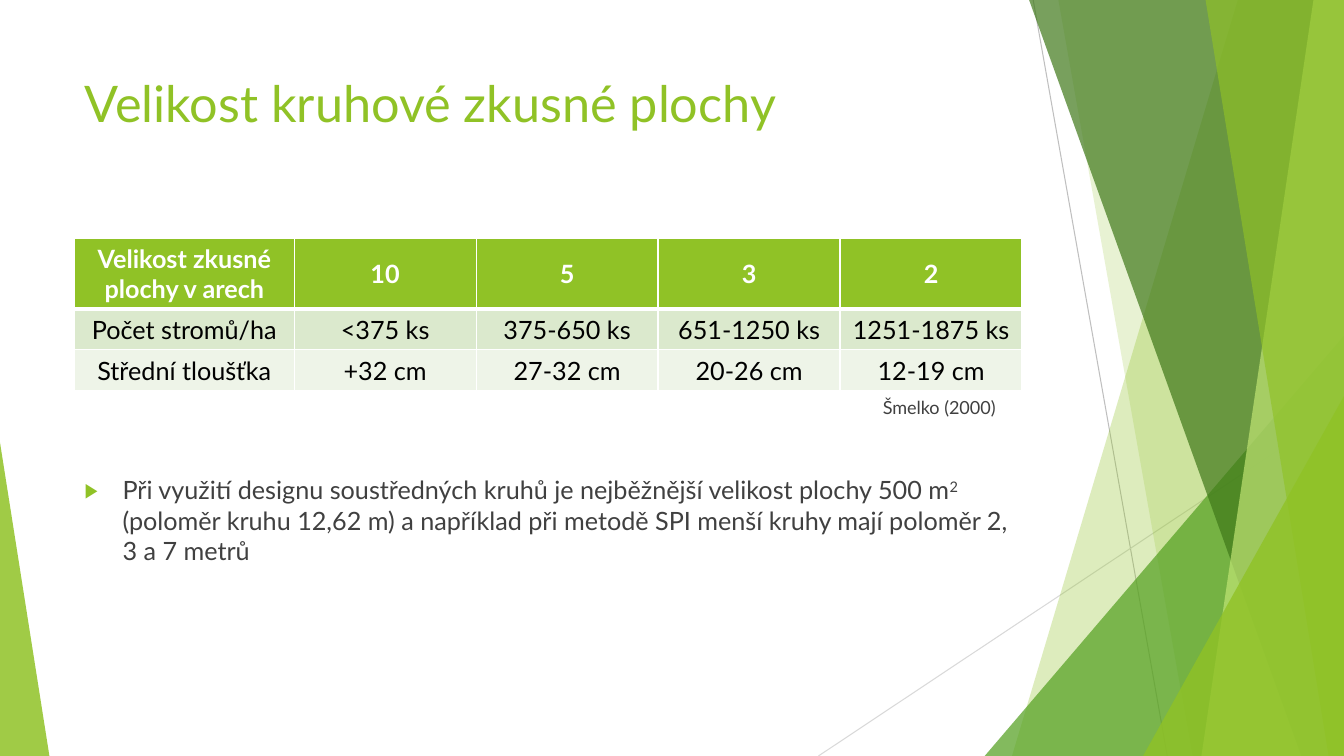
from lxml import etree
from pptx import Presentation
from pptx.dml.color import RGBColor
from pptx.enum.shapes import MSO_CONNECTOR, MSO_SHAPE
from pptx.enum.text import MSO_ANCHOR, MSO_AUTO_SIZE, PP_ALIGN
from pptx.oxml.ns import qn
from pptx.util import Pt

STRAIGHT = MSO_CONNECTOR.STRAIGHT
TRIANGLE = MSO_SHAPE.ISOSCELES_TRIANGLE
TOP, MIDDLE = MSO_ANCHOR.TOP, MSO_ANCHOR.MIDDLE
LEFT, CENTER = PP_ALIGN.LEFT, PP_ALIGN.CENTER
NO_FIT = MSO_AUTO_SIZE.NONE

FONT = "Lato"
GREEN = RGBColor(0x90, 0xC2, 0x26)
LEAF = RGBColor(0x54, 0xA0, 0x21)
FOREST = RGBColor(0x3F, 0x78, 0x19)
LIME = RGBColor(0xC0, 0xE4, 0x74)
BAND_DARK = RGBColor(0xDB, 0xE9, 0xCD)
BAND_LIGHT = RGBColor(0xEE, 0xF4, 0xE8)
WHITE = RGBColor(0xFF, 0xFF, 0xFF)
BLACK = RGBColor(0, 0, 0)
TEXT = RGBColor(0x40, 0x40, 0x40)
GRAY = RGBColor(0xBF, 0xBF, 0xBF)
PALE_GRAY = RGBColor(0xD9, 0xD9, 0xD9)

WIDTH, HEIGHT = 960, 540
MARGIN, CONTENT_WIDTH = 53.3, 676.8

TITLE = "Velikost kruhové zkusné plochy"
PLOT_SIZES = [
    ["Velikost zkusné plochy v arech", "10", "5", "3", "2"],
    ["Počet stromů/ha", "<375 ks", "375-650 ks", "651-1250 ks", "1251-1875 ks"],
    ["Střední tloušťka", "+32 cm", "27-32 cm", "20-26 cm", "12-19 cm"],
]
ROW_FILLS = [GREEN, BAND_DARK, BAND_LIGHT]
ROW_HEIGHTS = [49.4, 29.2, 29.2]
COLUMN_WIDTHS = [156.8] + [130] * 4
CITATION = "Šmelko (2000)"
# (text, baseline shift in percent)
NOTE = [
    ("Při využití designu soustředných kruhů je nejběžnější velikost plochy 500 m", 0),
    ("2 ", 30),
    ("(poloměr kruhu 12,62 m) a například při metodě SPI menší kruhy mají poloměr 2, "
     "3 a 7 metrů", 0),
]

# start and end of each thin line, colour
RAYS = [((738, 0), (833.8, HEIGHT), GRAY), ((WIDTH, 290.2), (584.6, HEIGHT), PALE_GRAY)]
# Bands run to the right edge: (x at top, x at bottom, colour, opacity).
# Wedges stand on the bottom edge: (left, top, width, apex, colour, opacity).
BACKDROP = [
    ("band", 884.2, 722.9, GREEN, 30),
    ("band", 756, 851.8, GREEN, 20),
    ("wedge", 703.4, 239.8, 256.6, 1, LEAF, 72),
    ("band", 735.1, 929.5, FOREST, 70),
    ("band", 938.2, 858.2, LIME, 70),
    ("band", 861.1, 949, GREEN, 65),
    ("wedge", 816.5, 283, 143.5, 1, GREEN, 80),
    ("wedge", 0, 316.1, 35.3, 0, GREEN, 85),
]


def add_child(parent, tag, **attributes):
    return etree.SubElement(parent, qn(tag), {k: str(v) for k, v in attributes.items()})


def paint(shape, color, opacity):
    shape.shadow.inherit = False
    shape.line.fill.background()
    shape.fill.solid()
    shape.fill.fore_color.rgb = color
    for tint in shape.fill._xPr.iter(qn("a:srgbClr")):
        add_child(tint, "a:alpha", val=opacity * 1000)


def add_band(shapes, x_top, x_bottom, color, opacity):
    outline = [(x_top, 0), (WIDTH, 0), (WIDTH, HEIGHT), (x_bottom, HEIGHT)]
    corners = [(Pt(x), Pt(y)) for x, y in outline]
    builder = shapes.build_freeform(*corners[0], scale=1.0)
    builder.add_line_segments(corners[1:], close=True)
    paint(builder.convert_to_shape(), color, opacity)


def add_wedge(shapes, left, top, width, apex, color, opacity):
    wedge = shapes.add_shape(TRIANGLE, Pt(left), Pt(top), Pt(width), Pt(HEIGHT - top))
    wedge.adjustments[0] = apex
    paint(wedge, color, opacity)


def add_ray(shapes, start, end, color):
    ray = shapes.add_connector(STRAIGHT, *map(Pt, start + end))
    ray.line.color.rgb = color
    ray.line.width = Pt(0.75)
    add_child(ray._element.spPr, "a:effectLst")


def write(frame, text, size=18, color=TEXT, bold=False, align=LEFT, anchor=TOP, bullet=None):
    """Fill a text frame; text is a string or a list of (text, baseline) runs."""
    frame.word_wrap = True
    frame.vertical_anchor = anchor
    paragraph = frame.paragraphs[0]
    if bullet:
        properties = paragraph._p.get_or_add_pPr()
        properties.set("marL", str(Pt(27)))
        properties.set("indent", str(Pt(-27)))
        add_child(add_child(properties, "a:buClr"), "a:srgbClr", val=GREEN)
        add_child(properties, "a:buSzPct", val=80000)
        add_child(properties, "a:buFont", typeface=FONT)
        add_child(properties, "a:buChar", char=bullet)
    paragraph.alignment = align
    paragraph.space_before = Pt(0)
    for words, baseline in [(text, 0)] if isinstance(text, str) else text:
        run = paragraph.add_run()
        run.text = words
        run.font.name, run.font.size, run.font.bold = FONT, Pt(size), bold
        run.font.color.rgb = color
        if baseline:
            run.font._element.set("baseline", str(baseline * 1000))


def place(shape, left, top, width, height):
    shape.left, shape.top, shape.width, shape.height = map(Pt, (left, top, width, height))
    shape.text_frame.auto_size = NO_FIT


def add_borders(cell, **widths):
    properties = cell._tc.get_or_add_tcPr()
    for side in "LRTB":
        border = add_child(properties, f"a:ln{side}", w=Pt(widths.get(side, 1)))
        add_child(add_child(border, "a:solidFill"), "a:srgbClr", val=WHITE)


def add_size_table(shapes):
    table = shapes.add_table(len(PLOT_SIZES), len(COLUMN_WIDTHS), Pt(MARGIN), Pt(170.3),
                             Pt(sum(COLUMN_WIDTHS)), Pt(sum(ROW_HEIGHTS))).table
    table.horz_banding = False
    for column, width in zip(table.columns, COLUMN_WIDTHS):
        column.width = Pt(width)
    for r, (values, fill, height) in enumerate(zip(PLOT_SIZES, ROW_FILLS, ROW_HEIGHTS)):
        table.rows[r].height = Pt(height)
        header = r == 0
        for c, value in enumerate(values):
            cell = table.cell(r, c)
            add_borders(cell, T=3 if r == 1 else 1, B=3 if header else 1)
            cell.fill.solid()
            cell.fill.fore_color.rgb = fill
            write(cell.text_frame, value, color=WHITE if header else BLACK,
                  bold=header, align=CENTER)
            cell.vertical_anchor = MIDDLE


def main():
    deck = Presentation()
    deck.slide_width, deck.slide_height = Pt(WIDTH), Pt(HEIGHT)
    slide = deck.slides.add_slide(deck.slide_layouts[1])
    shapes = slide.shapes
    title, note = shapes.title, slide.placeholders[1]

    for ray in RAYS:
        add_ray(shapes, *ray)
    adders = {"band": add_band, "wedge": add_wedge}
    for kind, *geometry in BACKDROP:
        adders[kind](shapes, *geometry)

    # Bring the placeholders in front of the backdrop
    for placeholder in (title, note):
        shapes._spTree.append(placeholder._element)
    place(title, MARGIN, 48, CONTENT_WIDTH, 103.7)
    write(title.text_frame, TITLE, size=36, color=GREEN)
    add_size_table(shapes)
    place(note, MARGIN, 335.5, CONTENT_WIDTH, 136)
    write(note.text_frame, NOTE, bullet="▶")
    citation = shapes.add_textbox(0, 0, 0, 0)
    place(citation, 623.5, 280, 131.8, 21.6)
    write(citation.text_frame, CITATION, size=12.9)

    deck.save("out.pptx")


if __name__ == "__main__":
    main()
